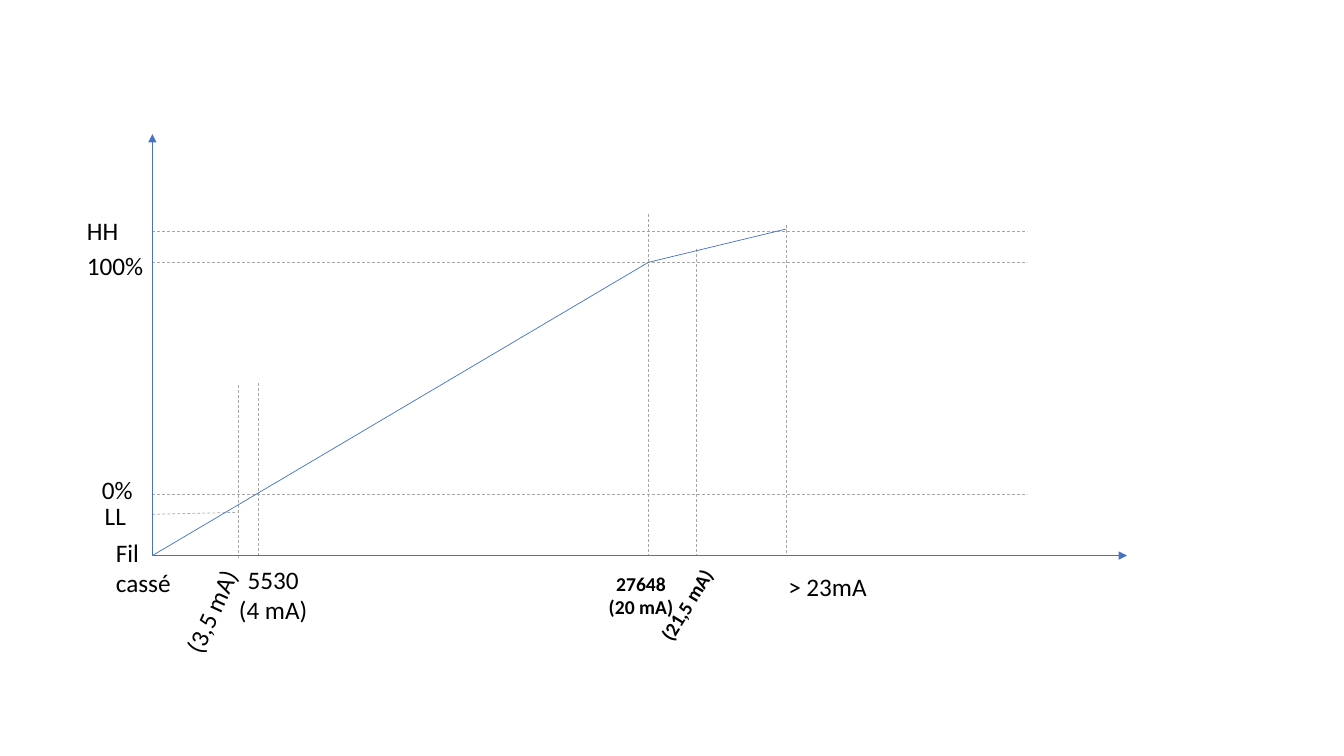
from lxml.etree import SubElement
from pptx import Presentation
from pptx.dml.color import RGBColor
from pptx.enum.dml import MSO_LINE_DASH_STYLE as Dash
from pptx.enum.shapes import MSO_CONNECTOR as Connector
from pptx.enum.text import MSO_AUTO_SIZE as AutoSize, PP_ALIGN as Align
from pptx.oxml.ns import qn
from pptx.util import Cm, Pt

BLUE = RGBColor(0x44, 0x72, 0xC4)
GREY = RGBColor(0xA6, 0xA6, 0xA6)
BLACK = RGBColor(0, 0, 0)

# Plot area in cm: left, top, width, height
PLOT = (3.84, 3.38, 24.56, 10.62)

# Signal levels: distance above the origin, in cm
LEVEL_0, LEVEL_100, LEVEL_HH = 1.55, 7.39, 8.18
LEVEL_LENGTH = 22.05

# Currents: distance right of the origin, in cm
MA_3_5, MA_4, MA_20, MA_21_5, MA_23 = 2.16, 2.67, 12.5, 13.72, 15.98

CURVE = [(0, 0), (MA_20, LEVEL_100), (MA_23, 8.23)]

# Current guides: x, bottom, top
CURRENT_GUIDES = [
    (MA_3_5, -0.08, 4.29),
    (MA_4, 0, 4.34),
    (MA_20, 0, 8.61),
    (MA_21_5, 0, 7.72),
    (MA_23, 0, 8.33),
]

# Level labels: text, x, y below the origin, width, height
LEVEL_LABELS = [
    ("HH", -1.9, -8.69, 2.29, 1.02),
    ("100%", -1.9, -7.82, 2.29, 1.02),
    ("0%", -1.52, -2.18, 1.55, 1.02),
    ("LL", -1.45, -1.52, 2.29, 1.02),
    ("Fil cassé", -1.17, -0.58, 2.29, 1.8),
]

# Current labels: text, x, y below the origin, width, height, size, bold, rotation
CURRENT_LABELS = [
    ("(3,5 mA)", 0.03, 0.89, 2.9, 1.02, 18, False, 294.6),
    ("5530\n(4 mA)", 1.75, 0.1, 2.59, 1.8, 18, False, 0),
    ("27648\n(20 mA)", 11.02, 0.28, 2.59, 1.45, 14, True, 0),
    ("(21,5 mA)", 12.17, 0.81, 2.59, 0.86, 14, True, 301.6),
    ("> 23mA", 15.72, 0.28, 2.59, 1.02, 18, False, 0),
]


def add_line(slide, origin, start, end, color, dashed=False, arrow=False):
    """Draw a line between two points measured right of and above the origin."""
    x, y = origin
    line = slide.shapes.add_connector(
        Connector.STRAIGHT,
        Cm(x + start[0]), Cm(y - start[1]), Cm(x + end[0]), Cm(y - end[1]))
    line.line.color.rgb = color
    line.line.width = Pt(0.5)
    if dashed:
        line.line.dash_style = Dash.DASH
    if arrow:
        SubElement(line.line._get_or_add_ln(), qn("a:tailEnd"), type="triangle")
    SubElement(line._element.spPr, qn("a:effectLst"))


def add_label(slide, origin, text, x, y, width, height,
              size=18, bold=False, rotation=0, align=Align.LEFT):
    label = slide.shapes.add_textbox(
        Cm(origin[0] + x), Cm(origin[1] + y), Cm(width), Cm(height))
    label.rotation = rotation
    frame = label.text_frame
    frame.text = text
    frame.word_wrap = not rotation
    frame.auto_size = AutoSize.SHAPE_TO_FIT_TEXT
    for paragraph in frame.paragraphs:
        paragraph.alignment = align
        for run in paragraph.runs:
            run.font.name = "Calibri"
            run.font.size = Pt(size)
            run.font.bold = bold
            run.font.color.rgb = BLACK


def add_guides(slide, origin):
    for level in (LEVEL_0, LEVEL_100, LEVEL_HH):
        add_line(slide, origin, (0, level), (LEVEL_LENGTH, level), GREY, dashed=True)
    for x, bottom, top in CURRENT_GUIDES:
        add_line(slide, origin, (x, top), (x, bottom), GREY, dashed=True)
    # Short LL guide
    add_line(slide, origin, (0, 1.04), (MA_3_5, 1.09), GREY, dashed=True)


def add_signal_plot(slide, left, top, width, height):
    origin = (left, top + height)
    add_guides(slide, origin)
    # Axes
    for tip in ((0, height), (width, 0)):
        add_line(slide, origin, (0, 0), tip, BLUE, arrow=True)
    # Signal curve
    for start, end in zip(CURVE, CURVE[1:]):
        add_line(slide, origin, start, end, BLUE)
    # Labels
    for label in LEVEL_LABELS:
        add_label(slide, origin, *label)
    for label in CURRENT_LABELS:
        add_label(slide, origin, *label, align=Align.CENTER)


def main():
    deck = Presentation()
    deck.slide_width, deck.slide_height = Cm(33.87), Cm(19.05)
    slide = deck.slides.add_slide(deck.slide_layouts[6])
    add_signal_plot(slide, *PLOT)
    deck.save("out.pptx")


if __name__ == "__main__":
    main()
